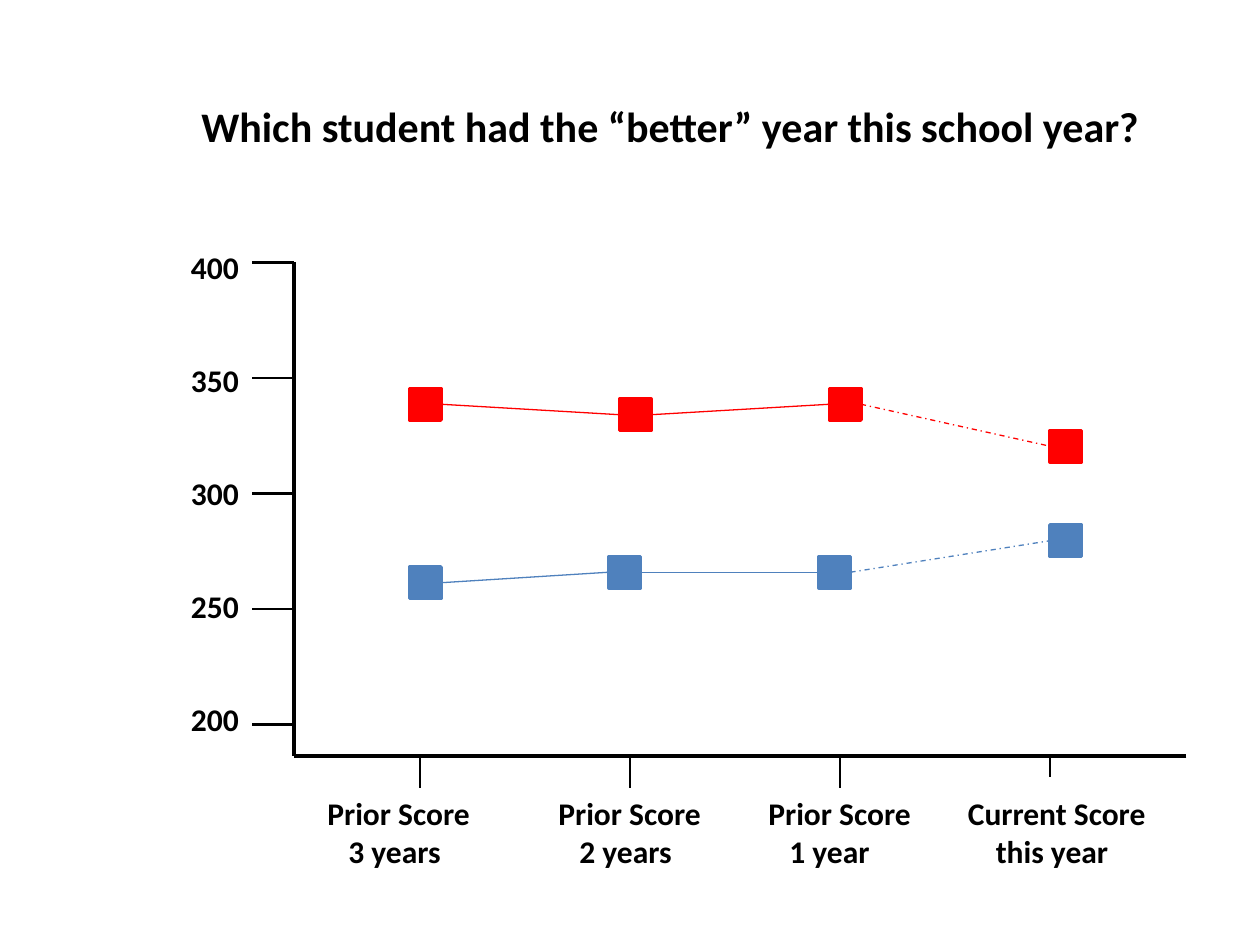
from itertools import pairwise

from lxml import etree
from pptx import Presentation, util as u
from pptx.dml.color import RGBColor
from pptx.enum import dml, shapes, text
from pptx.oxml.ns import qn

COLORS = {"ink": "000000", "high": "FF0000", "low": "4F81BD"}
COLUMNS, ROWS = 120, 90
MARKER = 3
AXIS_LEFT, AXIS_RIGHT, AXIS_TOP, AXIS_BASE = 28, 113, 25, 72


class ScoreSlide:
    font = {"name": "Calibri", "bold": True}
    frame = {"word_wrap": False, "auto_size": text.MSO_AUTO_SIZE.SHAPE_TO_FIT_TEXT}

    def __init__(self, deck):
        self.slide = deck.slides.add_slide(deck.slide_layouts[6])
        self.column = deck.slide_width / COLUMNS
        self.row = deck.slide_height / ROWS

    def place(self, *cells):
        units = (self.column, self.row) * 2
        return [u.Emu(round(cell * unit)) for cell, unit in zip(cells, units)]

    def color(self, name):
        return RGBColor.from_string(COLORS[name])

    def format(self, target, values):
        for key, value in values.items():
            setattr(target, key, value)

    def line(self, start, end, color, width, dash=None):
        rule = self.slide.shapes.add_connector(
            shapes.MSO_CONNECTOR.STRAIGHT, *self.place(*start, *end))
        rule.line.color.rgb = self.color(color)
        self.format(rule.line, {"width": u.Pt(width), "dash_style": dash})
        etree.SubElement(rule.element.spPr, qn("a:effectLst"))

    def marker(self, left, top, color):
        square = self.slide.shapes.add_shape(
            shapes.MSO_SHAPE.RECTANGLE, *self.place(left, top, MARKER, MARKER))
        square.shadow.inherit = False
        square.fill.solid()
        square.fill.fore_color.rgb = square.line.color.rgb = self.color(color)
        square.line.width = u.Pt(2)

    def label(self, cells, lines, size=18, gap=0, indent=0):
        box = self.slide.shapes.add_textbox(*self.place(*cells)).text_frame
        self.format(box, self.frame)
        box.text = "\n".join(lines)
        for index, paragraph in enumerate(box.paragraphs):
            for run in paragraph.runs:
                self.format(run.font, {**self.font, "size": u.Pt(size)})
                run.font.color.rgb = self.color("ink")
            if index:
                paragraph.space_before = u.Pt(gap)
                paragraph._p.get_or_add_pPr().set("marL", str(u.Pt(indent)))

    def series(self, corners, color):
        middle = MARKER / 2
        for (left, top), (next_left, next_top) in pairwise(corners):
            is_current = (next_left, next_top) == corners[-1]
            self.line((left + MARKER, top + middle), (next_left, next_top + middle),
                      color, 0.75, dml.MSO_LINE.DASH_DOT if is_current else None)
        for corner in corners:
            self.marker(*corner, color)


def main():
    deck = Presentation()
    deck.slide_width, deck.slide_height = u.Inches(10), u.Inches(7.5)
    chart = ScoreSlide(deck)

    chart.label((18, 9, 93.6, 6),
                ["Which student had the “better” year this school year?"], size=24)

    chart.line((AXIS_LEFT, AXIS_TOP), (AXIS_LEFT, AXIS_BASE), "ink", 2.25)
    chart.line((AXIS_RIGHT, AXIS_BASE), (AXIS_LEFT, AXIS_BASE), "ink", 2.25)
    scores = range(400, 199, -50)
    for index in range(len(scores)):
        level = AXIS_TOP + 11 * index
        chart.line((AXIS_LEFT - 4, level), (AXIS_LEFT, level), "ink", 1.5)
    chart.label((17, 23, 7.1, 48.5), map(str, scores), gap=43)

    years = [
        (30, 16.1, 3, 12, "Prior Score", "3 years"),
        (52, 16.1, 3, 12, "Prior Score", "2 years"),
        (72, 16.1, 3, 12, "Prior Score", "1 year"),
        (91, 19.4, 2, 16, "Current Score", "this year"),
    ]
    for index, (left, width, tick, indent, *caption) in enumerate(years):
        position = 40 + 20 * index
        chart.line((position, AXIS_BASE), (position, AXIS_BASE + tick), "ink", 1)
        chart.label((left, 75, width, 8.5), caption, indent=indent)

    chart.series([(39, 37), (59, 38), (79, 37), (100, 41)], "high")
    chart.series([(39, 54), (58, 53), (78, 53), (100, 50)], "low")

    deck.save("out.pptx")


if __name__ == "__main__":
    main()
